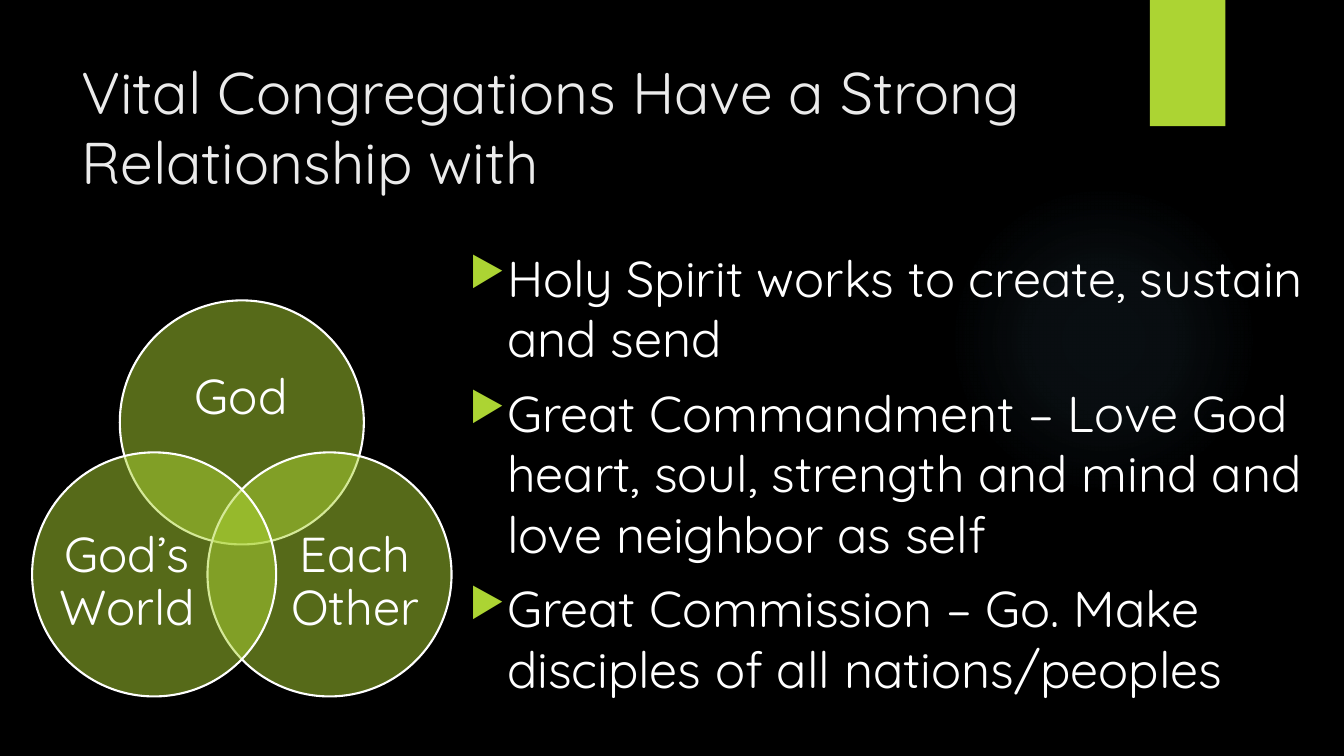
import pptx
import pptx.dml.color
import pptx.enum.shapes
import pptx.enum.text
import pptx.oxml
import pptx.oxml.ns
import pptx.util

Cm = pptx.util.Cm
Pt = pptx.util.Pt
RGBColor = pptx.dml.color.RGBColor
SHAPE = pptx.enum.shapes.MSO_SHAPE
ANCHOR = pptx.enum.text.MSO_ANCHOR
ALIGN = pptx.enum.text.PP_ALIGN

BLACK = RGBColor(0x00, 0x00, 0x00)
WHITE = RGBColor(0xFF, 0xFF, 0xFF)
PALE = RGBColor(0xEB, 0xEB, 0xEB)
LIME = RGBColor(0xAC, 0xD4, 0x33)
SKY = RGBColor(0x7A, 0xC4, 0xF0)
FONT = "Quicksand"

TITLE = "Vital Congregations Have a Strong Relationship with"
POINTS = [
    "Holy Spirit works to create, sustain and send",
    "Great Commandment – Love God heart, soul, strength and mind and love neighbor as self",
    "Great Commission – Go. Make disciples of all nations/peoples",
]
CIRCLES = [
    ("God", 1, 0, (0.81, 1.09, 4.5, 2.77)),
    ("Each Other", 2, 1, (1.88, 1.6, 3.68, 3.38)),
    ("God’s World", 0, 1, (0.56, 1.6, 3.68, 3.38)),
]


def xml(text):
    """Parse a fragment in the DrawingML namespace."""
    return pptx.oxml.parse_xml(text.replace(" ", f" {pptx.oxml.ns.nsdecls('a')} ", 1))


def set_all(obj, values):
    """Set each attribute of an object from a dict."""
    for name, value in values.items():
        setattr(obj, name, value)


def add_shape(s, kind, box, color=None):
    """Add a shape without outline or shadow, filled if a colour is given."""
    sp = s.shapes.add_shape(kind, *map(Cm, box))
    sp.shadow.inherit = False
    sp.line.fill.background()
    if color is not None:
        sp.fill.solid()
        sp.fill.fore_color.rgb = color
    return sp


def add_text(s, box, lines, size, color, frame=None, para=None):
    """Add a wrapped text box and return its paragraphs."""
    tf = s.shapes.add_textbox(*map(Cm, box)).text_frame
    set_all(tf, {"word_wrap": True, **(frame or {})})
    tf.text = "\n".join(lines)
    for p in tf.paragraphs:
        set_all(p, para or {})
        for r in p.runs:
            set_all(r.font, {"name": FONT, "size": Pt(size)})
            r.font.color.rgb = color
    return tf.paragraphs


def add_glow(s, box):
    """Add the faint round glow that fades towards its edge."""
    sp = add_shape(s, SHAPE.OVAL, box)
    stops = "".join(
        f'<a:gs pos="{pos}000"><a:srgbClr val="{SKY}"><a:alpha val="{alpha}000"/></a:srgbClr></a:gs>'
        for pos, alpha in [(0, 7), (36, 6), (69, 0), (100, 0)])
    sp._element.spPr.insert(2, xml(
        f'<a:gradFill rotWithShape="1"><a:gsLst>{stops}</a:gsLst><a:path path="circle">'
        '<a:fillToRect l="50000" t="50000" r="50000" b="50000"/></a:path></a:gradFill>'))


def add_tab(s, box):
    """Add the lime tab with its soft shadow."""
    sp = add_shape(s, SHAPE.RECTANGLE, box, LIME)
    effects = sp._element.spPr.find(pptx.oxml.ns.qn("a:effectLst"))
    effects.append(xml(
        f'<a:outerShdw blurRad="{Pt(3)}" dist="{Pt(2)}" dir="5400000" rotWithShape="0">'
        f'<a:srgbClr val="{BLACK}"><a:alpha val="45000"/></a:srgbClr></a:outerShdw>'))


def add_venn(s, box):
    """Add three overlapping labelled circles inside the box."""
    left, top, width, height = box
    size = 6.15
    step_x, step_y = (width - size) / 2, height - size
    frame = dict.fromkeys(("margin_left", "margin_top", "margin_right", "margin_bottom"), 0)
    frame["vertical_anchor"] = ANCHOR.MIDDLE
    para = {"alignment": ALIGN.CENTER, "line_spacing": 0.9}
    for label, col, row, (dx, dy, w, h) in CIRCLES:
        x, y = left + col * step_x, top + row * step_y
        sp = add_shape(s, SHAPE.OVAL, (x, y, size, size), LIME)
        color = sp._element.spPr.find(".//" + pptx.oxml.ns.qn("a:srgbClr"))
        color.append(xml('<a:alpha val="50000"/>'))
        sp.line.color.rgb = WHITE
        sp.line.width = Pt(1.5)
        add_text(s, (x + dx, y + dy, w, h), [label], 35, WHITE, frame, para)


def add_points(s, box):
    """Add the list with lime triangle bullets."""
    for i, p in enumerate(add_text(s, box, POINTS, 36, WHITE)):
        pPr = p._p.get_or_add_pPr()
        pPr.set("marL", str(Cm(0.95)))
        pPr.set("indent", str(-Cm(0.95)))
        pPr.append(xml(f'<a:buClr ><a:srgbClr val="{LIME}"/></a:buClr>'))
        pPr.append(xml('<a:buSzPct val="80000"/>'))
        pPr.append(xml('<a:buChar char="▶"/>'))
        p.space_before = Pt(10 if i else 0)


def main():
    """Build the slide and save it."""
    prs = pptx.Presentation()
    set_all(prs, {"slide_width": Cm(33.87), "slide_height": Cm(19.05)})
    s = prs.slides.add_slide(prs.slide_layouts[6])
    s.background.fill.solid()
    s.background.fill.fore_color.rgb = BLACK
    add_glow(s, (23.9, 4.65, 7.82, 7.82))
    add_tab(s, (28.98, 0, 1.9, 3.18))
    add_text(s, (1.8, 1.27, 26.14, 3.89), [TITLE], 42, PALE)
    add_venn(s, (0.81, 7.57, 10.57, 9.98))
    add_points(s, (11.58, 6.1, 22.29, 12.34))
    prs.save("out.pptx")


if __name__ == "__main__":
    main()
